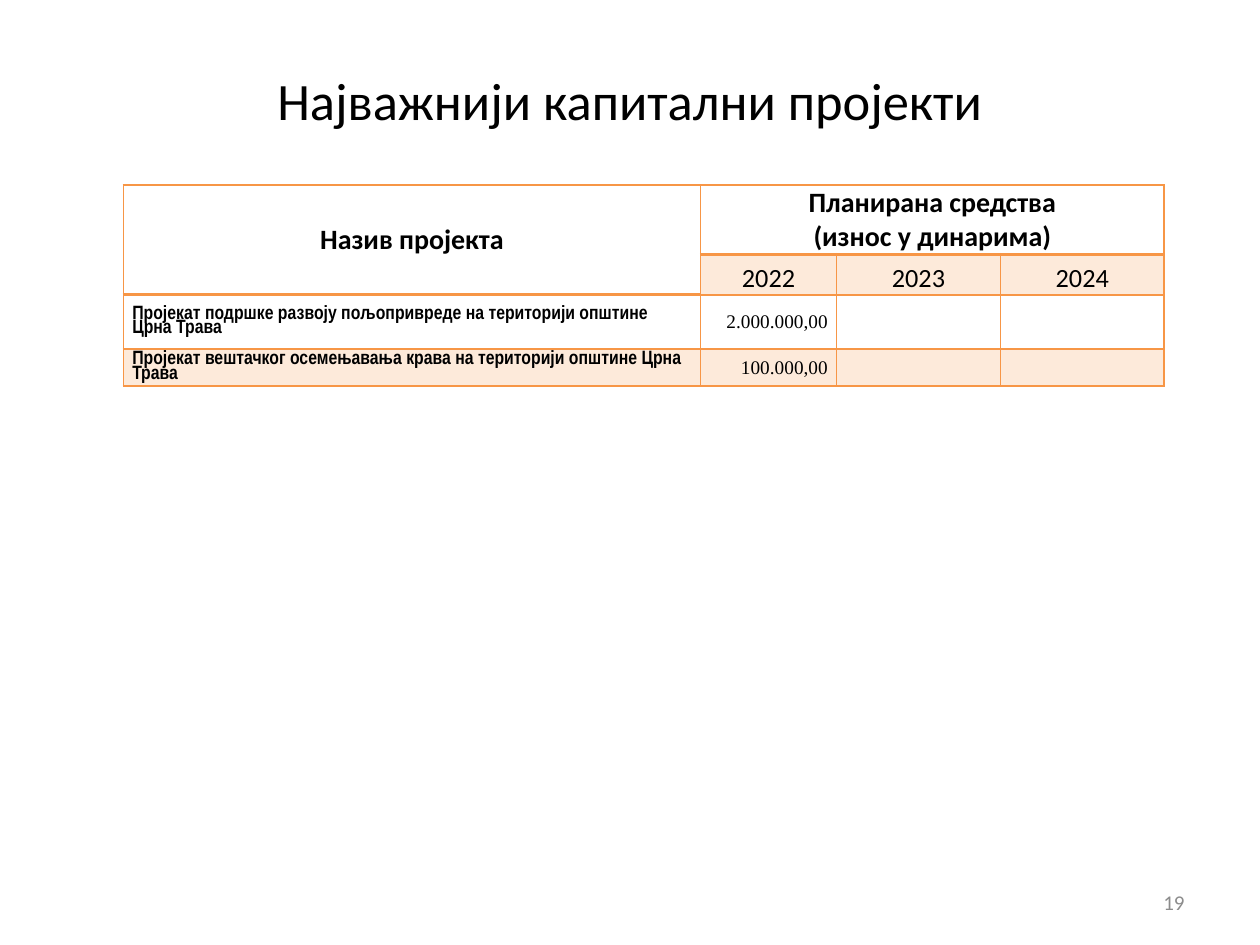
import pptx
import pptx.util
import pptx.dml.color
import pptx.enum.text
import pptx.oxml
import pptx.oxml.ns

RGBColor = pptx.dml.color.RGBColor
Align = pptx.enum.text.PP_ALIGN
Anchor = pptx.enum.text.MSO_ANCHOR

BLACK = RGBColor(0x00, 0x00, 0x00)
WHITE = RGBColor(0xFF, 0xFF, 0xFF)
GRAY = RGBColor(0x8C, 0x8C, 0x8C)
ORANGE = RGBColor(0xF7, 0x96, 0x46)
PALE_ORANGE = RGBColor(0xFD, 0xEA, 0xDA)

COLUMN_WIDTHS = [4.58, 1.08, 1.3, 1.3]
ROW_HEIGHTS = [0.55, 0.32, 0.43, 0.29]
YEARS = ["2022", "2023", "2024"]
PROJECTS = [
    ("Пројекат подршке развоју пољопривреде на територији општине Црна Трава",
     ["2.000.000,00", "", ""], WHITE),
    ("Пројекат вештачког осемењавања крава на територији општине Црна Трава",
     ["100.000,00", "", ""], PALE_ORANGE),
]


class SlideBuilder:
    """Holds the style and the current slide; positions are shares of its size."""

    def __init__(self, presentation):
        self.width = presentation.slide_width
        self.height = presentation.slide_height
        self.slide = presentation.slides.add_slide(presentation.slide_layouts[5])
        self.font_name = "Calibri"

    def box(self, left, top, width, height):
        return (int(left * self.width), int(top * self.height),
                int(width * self.width), int(height * self.height))

    def set_text(self, text_frame, text, size, color=BLACK, align=Align.CENTER,
                 bold=False, font_name=None, line_spacing=None):
        text_frame.text = text
        text_frame.word_wrap = True
        for paragraph in text_frame.paragraphs:
            paragraph.alignment = align
            paragraph.line_spacing = line_spacing
            paragraph.font.name = font_name or self.font_name
            paragraph.font.size = pptx.util.Pt(size)
            paragraph.font.bold = bold
            paragraph.font.color.rgb = color

    def title(self, text, *place):
        shape = self.slide.shapes.title
        shape.left, shape.top, shape.width, shape.height = self.box(*place)
        shape.text_frame.vertical_anchor = Anchor.MIDDLE
        self.set_text(shape.text_frame, text, 30)

    def page_number(self, text, *place):
        shape = self.slide.shapes.add_textbox(*self.box(*place))
        shape.text_frame.vertical_anchor = Anchor.MIDDLE
        self.set_text(shape.text_frame, text, 12, GRAY, Align.RIGHT)

    def table(self, left, top, column_widths, row_heights):
        place = self.box(left, top, 0, 0)[:2]
        frame = self.slide.shapes.add_table(
            len(row_heights), len(column_widths), *place,
            pptx.util.Inches(sum(column_widths)), pptx.util.Inches(sum(row_heights)))
        table = frame.table
        table.first_row = table.horz_banding = False
        for column, width in zip(table.columns, column_widths):
            column.width = pptx.util.Inches(width)
        for row, height in zip(table.rows, row_heights):
            row.height = pptx.util.Inches(height)
        return table

    def cell(self, cell, text, size, fill=WHITE, anchor=Anchor.MIDDLE, **style):
        cell.margin_left = cell.margin_right = pptx.util.Inches(0.07)
        cell.margin_top = cell.margin_bottom = 0
        cell.vertical_anchor = anchor
        cell.fill.solid()
        cell.fill.fore_color.rgb = fill
        self.set_text(cell.text_frame, text, size, **style)

    def borders(self, cell, **widths):
        properties = cell._tc.get_or_add_tcPr()
        for index, side in enumerate("LRTB"):
            width = pptx.util.Pt(widths.get(side, 1))
            properties.insert(index, pptx.oxml.parse_xml(
                f'<a:ln{side} {pptx.oxml.ns.nsdecls("a")} w="{width}">'
                f'<a:solidFill><a:srgbClr val="{ORANGE}"/></a:solidFill></a:ln{side}>'))


def main():
    presentation = pptx.Presentation()
    presentation.slide_width = pptx.util.Inches(10)
    presentation.slide_height = pptx.util.Inches(7.5)
    builder = SlideBuilder(presentation)

    # Title and page number
    builder.title("Најважнији капитални пројекти", 0.05, 0.04, 0.9, 0.13)
    builder.page_number("19", 0.72, 0.93, 0.23, 0.05)

    # Table header
    table = builder.table(0.098, 0.196, COLUMN_WIDTHS, ROW_HEIGHTS)
    table.cell(0, 0).merge(table.cell(1, 0))
    table.cell(0, 1).merge(table.cell(0, 3))
    builder.cell(table.cell(0, 0), "Назив пројекта", 16, bold=True)
    builder.cell(table.cell(0, 1), " Планирана средства \n(износ у динарима)", 16,
                 anchor=Anchor.BOTTOM, bold=True)
    for column, year in enumerate(YEARS, start=1):
        builder.cell(table.cell(1, column), year, 15, PALE_ORANGE, Anchor.BOTTOM)

    # Projects and planned amounts
    for row, (name, amounts, fill) in enumerate(PROJECTS, start=2):
        builder.cell(table.cell(row, 0), name, 11, fill, align=Align.LEFT,
                     bold=True, font_name="Arial Narrow", line_spacing=0.8)
        for column, amount in enumerate(amounts, start=1):
            builder.cell(table.cell(row, column), amount, 11, fill,
                         align=Align.RIGHT, font_name="Times New Roman")

    # Borders, heavier below the header cells
    heavy_below = {(0, 0), (1, 0), (0, 1), (0, 2), (0, 3)}
    for row in range(len(ROW_HEIGHTS)):
        for column in range(len(COLUMN_WIDTHS)):
            builder.borders(table.cell(row, column),
                            B=2 if (row, column) in heavy_below else 1,
                            T=2 if (row - 1, column) in heavy_below else 1)

    presentation.save("out.pptx")


if __name__ == "__main__":
    main()
